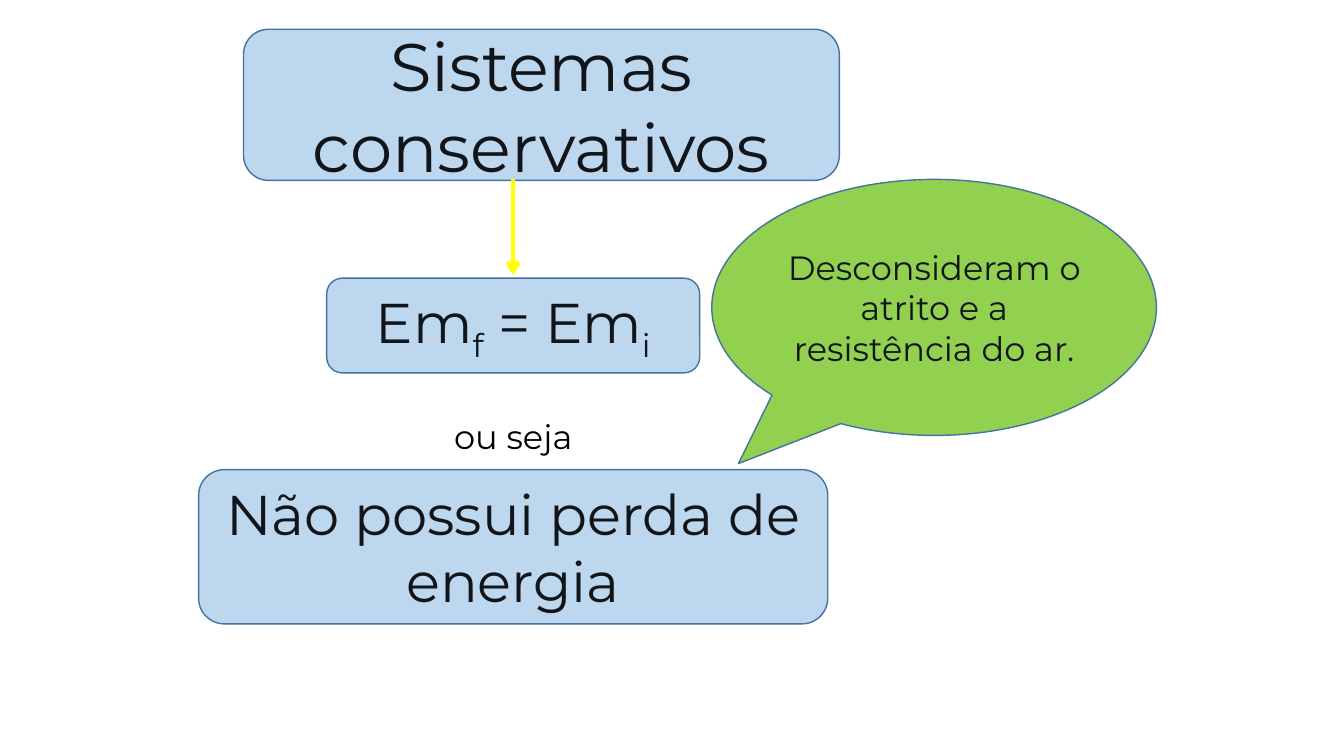
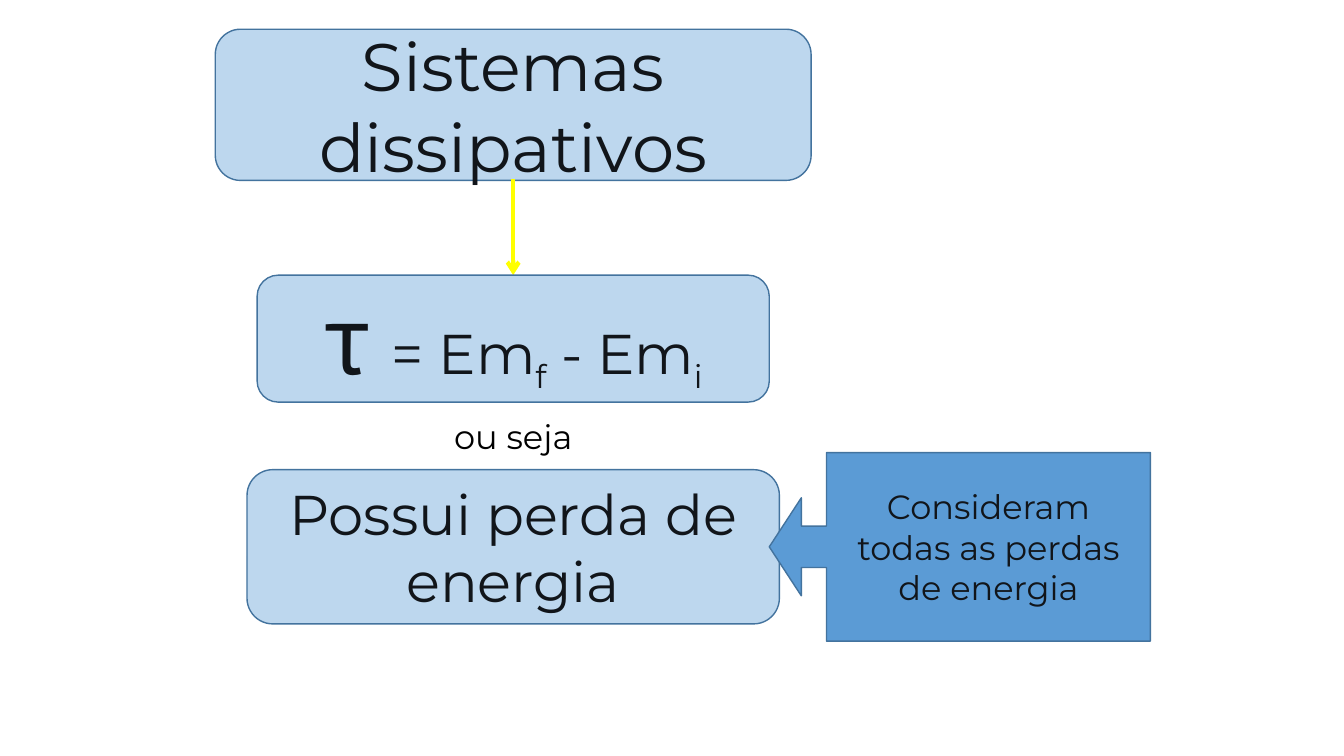
"""Build two slides that contrast conservative and dissipative systems."""
import pptx
import pptx.util
import pptx.dml.color
import pptx.enum.shapes
import pptx.enum.text
import pptx.oxml.ns
import lxml.etree

SHAPE = pptx.enum.shapes.MSO_SHAPE
INCH = pptx.util.Inches
WIDE, HIGH = 13.33, 7.5
AXIS = 5.09

THEME = {
    "font": "Montserrat", "greek": "Noto Sans CJK KR",
    "ink": "11151A", "black": "000000", "box": "BDD7EE", "edge": "43739E",
    "arrow": "FFFF00", "green": "92D050", "blue": "5B9BD5",
    "title": 48, "large": 40, "note": 24, "symbol": 66,
    "rule": 1, "stem": 3,
}

ROWS = {"title": (0.29, 1.5), "link": (3.99, 0.68), "result": (4.66, 1.53)}
STEM = (1.78, 2.73)
TITLE_WIDE, LINK_WIDE = 5.91, 3.15
LINK = "ou seja"
LOW = {"base": -25}
TAU = {"size": THEME["symbol"], "font": THEME["greek"]}

SLIDES = [
    {
        "title": "Sistemas conservativos", "mid": 5.37,
        "formula": [("Em", {}), ("f", LOW), (" = Em", {}), ("i", LOW)],
        "formula_at": (2.76, 3.7, 0.94),
        "result": "Não possui perda de energia", "result_wide": 6.24,
        "note": "Desconsideram o atrito e a resistência do ar.",
        "note_at": (7.06, 1.78, 4.41, 2.54), "note_fill": "green",
        "note_kind": SHAPE.OVAL_CALLOUT, "adjust": (-0.44, 0.61),
    },
    {
        "title": "Sistemas dissipativos", "mid": AXIS,
        "formula": [("τ ", TAU), ("= Em", {}), ("f", LOW), (" - Em", {}), ("i", LOW)],
        "formula_at": (2.73, 5.08, 1.26),
        "result": "Possui perda de energia", "result_wide": 5.28,
        "note": "Consideram todas as perdas de energia",
        "note_at": (7.63, 4.49, 3.78, 1.87), "note_fill": "blue",
        "note_kind": SHAPE.LEFT_ARROW_CALLOUT, "adjust": (0.22, 0.26, 0.17, 0.85),
    },
]


def tint(name):
    """Return a theme colour."""
    return pptx.dml.color.RGBColor.from_string(THEME[name])


def centre(mid, top, wide, high):
    """Return a frame centred on a vertical axis."""
    return mid - wide / 2, top, wide, high


def write(shape, text, size="large", ink="ink"):
    """Put centred text, or a list of formatted runs, in a shape."""
    frame = shape.text_frame
    frame.word_wrap = True
    frame.auto_size = pptx.enum.text.MSO_AUTO_SIZE.NONE
    frame.vertical_anchor = pptx.enum.text.MSO_ANCHOR.MIDDLE
    line = frame.paragraphs[0]
    line.alignment = pptx.enum.text.PP_ALIGN.CENTER
    for words, style in [(text, {})] if isinstance(text, str) else text:
        run = line.add_run()
        run.text = words
        run.font.size = pptx.util.Pt(style.get("size", THEME[size]))
        run.font.name = style.get("font", THEME["font"])
        run.font.color.rgb = tint(ink)
        if "base" in style:
            run._r.get_or_add_rPr().set("baseline", str(style["base"] * 1000))


def block(slide, frame, kind=SHAPE.ROUNDED_RECTANGLE, fill="box", adjust=()):
    """Add a filled, outlined shape."""
    shape = slide.shapes.add_shape(kind, *map(INCH, frame))
    shape.shadow.inherit = False
    shape.fill.solid()
    shape.fill.fore_color.rgb = tint(fill)
    shape.line.color.rgb = tint("edge")
    shape.line.width = pptx.util.Pt(THEME["rule"])
    for index, value in enumerate(adjust):
        shape.adjustments[index] = value
    return shape


def head(slide, text, mid):
    """Place the title on its rounded box."""
    frame = centre(mid, ROWS["title"][0], TITLE_WIDE, ROWS["title"][1])
    title = slide.shapes.title
    title.left, title.top, title.width, title.height = map(INCH, frame)
    box = block(slide, frame)
    title._element.addprevious(box._element)
    write(title, text, size="title")


def stem(slide):
    """Draw the arrow from the title to the formula."""
    top, end = STEM
    line = slide.shapes.add_connector(
        pptx.enum.shapes.MSO_CONNECTOR.STRAIGHT, *map(INCH, (AXIS, top, AXIS, end)))
    line.line.color.rgb = tint("arrow")
    line.line.width = pptx.util.Pt(THEME["stem"])
    name = pptx.oxml.ns.qn
    lxml.etree.SubElement(line.line._get_or_add_ln(), name("a:tailEnd"), type="arrow")
    lxml.etree.SubElement(line._element.spPr, name("a:effectLst"))


def build(deck, data):
    """Build one slide from its content."""
    slide = deck.slides.add_slide(deck.slide_layouts[5])
    head(slide, data["title"], data["mid"])
    stem(slide)
    write(block(slide, centre(AXIS, *data["formula_at"])), data["formula"])
    top, high = ROWS["link"]
    link = slide.shapes.add_textbox(*map(INCH, centre(AXIS, top, LINK_WIDE, high)))
    write(link, LINK, size="note", ink="black")
    top, high = ROWS["result"]
    write(block(slide, centre(AXIS, top, data["result_wide"], high)), data["result"])
    note = block(slide, data["note_at"], data["note_kind"], data["note_fill"], data["adjust"])
    write(note, data["note"], size="note")


def main():
    """Build and save the deck."""
    deck = pptx.Presentation()
    deck.slide_width, deck.slide_height = INCH(WIDE), INCH(HIGH)
    for data in SLIDES:
        build(deck, data)
    deck.save("out.pptx")


if __name__ == "__main__":
    main()
